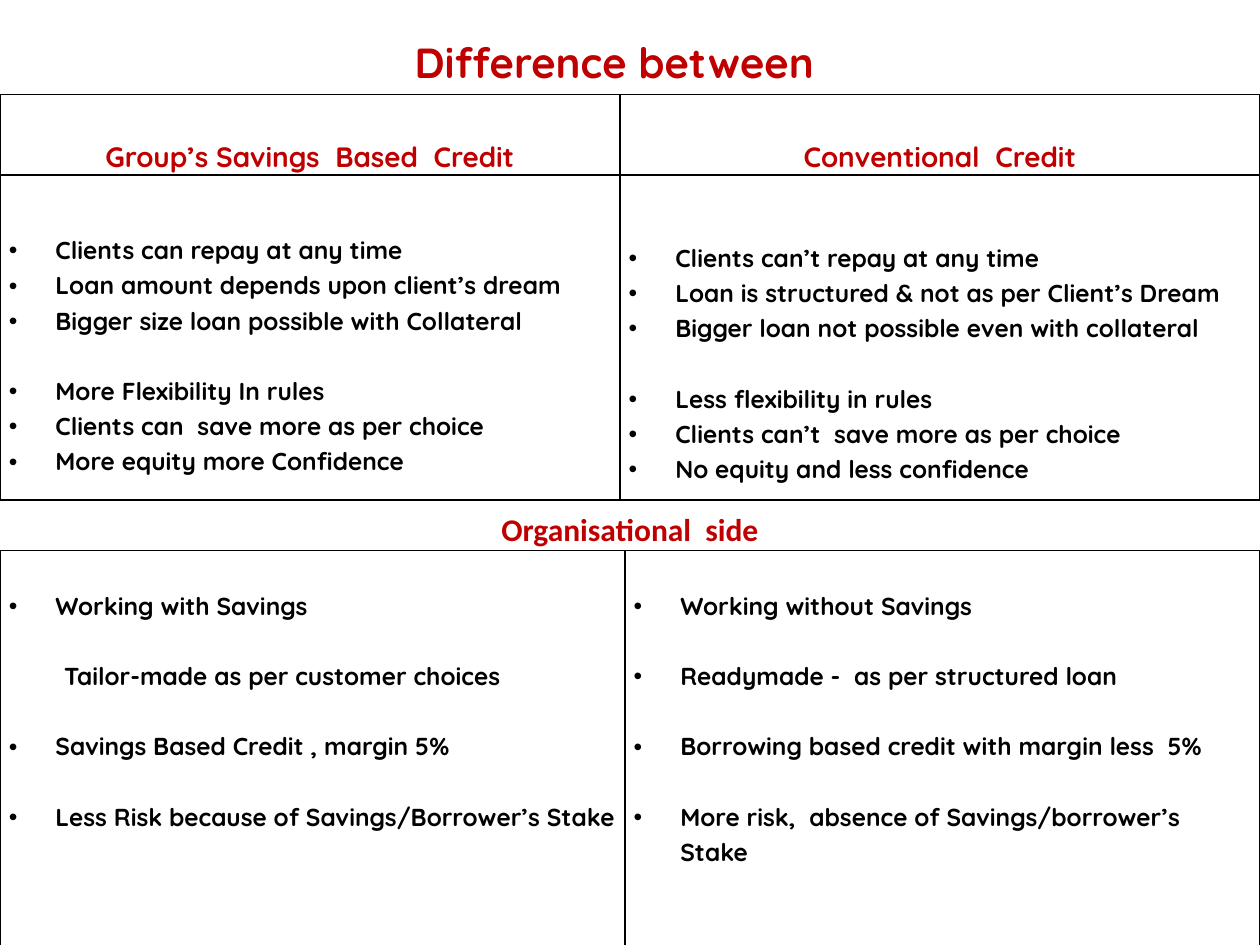
from dataclasses import dataclass

from lxml.etree import SubElement
from pptx import Presentation
from pptx.dml.color import RGBColor
from pptx.enum.text import MSO_ANCHOR, PP_ALIGN as Align
from pptx.oxml.ns import qn
from pptx.util import Inches, Pt


@dataclass(frozen=True)
class Theme:
    accent: str = "C00000"
    ink: str = "000000"
    body_font: str = "Quicksand"
    side_font: str = "Calibri"
    title: int = 24
    side: int = 18
    head: int = 16
    body: int = 14
    line_spacing: float = 1.15
    gap: float = 20.1


@dataclass(frozen=True)
class Line:
    text: str
    size: int = Theme.body
    color: str = Theme.ink
    font: str = Theme.body_font
    align: Align = Align.LEFT
    bullet: bool = True
    indent: float = 0.37
    gap_before: bool = False


@dataclass(frozen=True)
class Cell:
    top: float
    lines: list[Line]


@dataclass(frozen=True)
class Grid:
    top: float
    widths: list[float]
    heights: list[float]
    rows: list[list[Cell]]


THEME = Theme()


def set_all(obj, values: dict) -> None:
    for name, value in values.items():
        setattr(obj, name, value)


def heading(text: str, size: int, font: str = THEME.body_font) -> Line:
    return Line(text, size, THEME.accent, font, Align.CENTER, False)


def bullets(texts: list[str], gaps: set[int], align: Align = Align.LEFT) -> list[Line]:
    return [Line(t, align=align, gap_before=i in gaps) for i, t in enumerate(texts)]


def write_line(p, line: Line) -> None:
    p.alignment = line.align
    if line.gap_before:
        p.space_before = Pt(THEME.gap)
    pPr = p._p.get_or_add_pPr()
    if line.align != Align.CENTER:
        pPr.set("marL", str(Inches(line.indent)))
        pPr.set("indent", str(-Inches(line.indent) if line.bullet else 0))
    if line.bullet:
        SubElement(pPr, qn("a:buFont"), typeface="Arial")
        SubElement(pPr, qn("a:buChar"), char="•")
    r = p.add_run()
    r.text = line.text
    set_all(r.font, {"name": line.font, "size": Pt(line.size), "bold": True})
    r.font.color.rgb = RGBColor.from_string(line.color)


def add_heading(s, top: float, width: float, height: float, line: Line, anchor) -> None:
    tf = s.shapes.add_textbox(0, Inches(top), Inches(width), Inches(height)).text_frame
    set_all(tf, {"word_wrap": True, "vertical_anchor": anchor})
    write_line(tf.paragraphs[0], line)


def add_borders(cell) -> None:
    tcPr = cell._tc.get_or_add_tcPr()
    for i, side in enumerate(("lnL", "lnR", "lnT", "lnB")):
        ln = tcPr.makeelement(qn(f"a:{side}"), {"w": str(Pt(1))})
        fill = SubElement(ln, qn("a:solidFill"))
        SubElement(fill, qn("a:srgbClr"), val=THEME.ink)
        tcPr.insert(i, ln)


def fill_cell(cell, content: Cell) -> None:
    side = Inches(0.07)
    set_all(cell, {"margin_left": side, "margin_right": side,
                   "margin_top": Inches(content.top), "margin_bottom": 0})
    cell.fill.background()
    add_borders(cell)
    tf = cell.text_frame
    for i, line in enumerate(content.lines):
        p = tf.add_paragraph() if i else tf.paragraphs[0]
        p.line_spacing = THEME.line_spacing
        write_line(p, line)


def add_grid(s, grid: Grid) -> None:
    table = s.shapes.add_table(
        len(grid.heights), len(grid.widths), 0, Inches(grid.top),
        Inches(sum(grid.widths)), Inches(sum(grid.heights))).table
    set_all(table, {"first_row": False, "horz_banding": False})
    for col, width in zip(table.columns, grid.widths):
        col.width = Inches(width)
    for row, height, contents in zip(table.rows, grid.heights, grid.rows):
        row.height = Inches(height)
        for cell, content in zip(row.cells, contents):
            fill_cell(cell, content)


CLIENT_SIDE = Grid(0.75, [4.92, 5.08], [0.64, 2.58], [
    [Cell(0.32, [heading(text, THEME.head)])
     for text in ("Group’s Savings  Based  Credit", "Conventional  Credit")],
    [
        Cell(0.44, bullets([
            "Clients can repay at any time",
            "Loan amount depends upon client’s dream",
            "Bigger size loan possible with Collateral",
            "More Flexibility In rules",
            "Clients can  save more as per choice",
            "More equity more Confidence",
        ], {3}, Align.JUSTIFY)),
        Cell(0.5, bullets([
            "Clients can’t repay at any time",
            "Loan is structured & not as per Client’s Dream",
            "Bigger loan not possible even with collateral",
            "Less flexibility in rules",
            "Clients can’t  save more as per choice",
            "No equity and less confidence",
        ], {3}, Align.JUSTIFY)),
    ],
])

ORGANISATION_SIDE = Grid(4.37, [4.96, 5.04], [3.45], [[
    Cell(0.28, [
        Line("Working with Savings"),
        Line("Tailor-made as per customer choices",
             bullet=False, indent=0.44, gap_before=True),
        Line("Savings Based Credit , margin 5%", gap_before=True),
        Line("Less Risk because of Savings/Borrower’s Stake", gap_before=True),
    ]),
    Cell(0.28, bullets([
        "Working without Savings",
        "Readymade -  as per structured loan",
        "Borrowing based credit with margin less  5%",
        "More risk,  absence of Savings/borrower’s Stake",
    ], {1, 2, 3})),
]])


def main() -> None:
    prs = Presentation()
    set_all(prs, {"slide_width": Inches(10), "slide_height": Inches(7.5)})
    s = prs.slides.add_slide(prs.slide_layouts[6])
    add_heading(s, 0.24, 9.75, 0.5,
                heading("Difference between", THEME.title), MSO_ANCHOR.MIDDLE)
    add_grid(s, CLIENT_SIDE)
    add_heading(s, 4, 10, 0.4,
                heading("Organisational  side", THEME.side, THEME.side_font),
                MSO_ANCHOR.TOP)
    add_grid(s, ORGANISATION_SIDE)
    prs.save("out.pptx")


if __name__ == "__main__":
    main()
